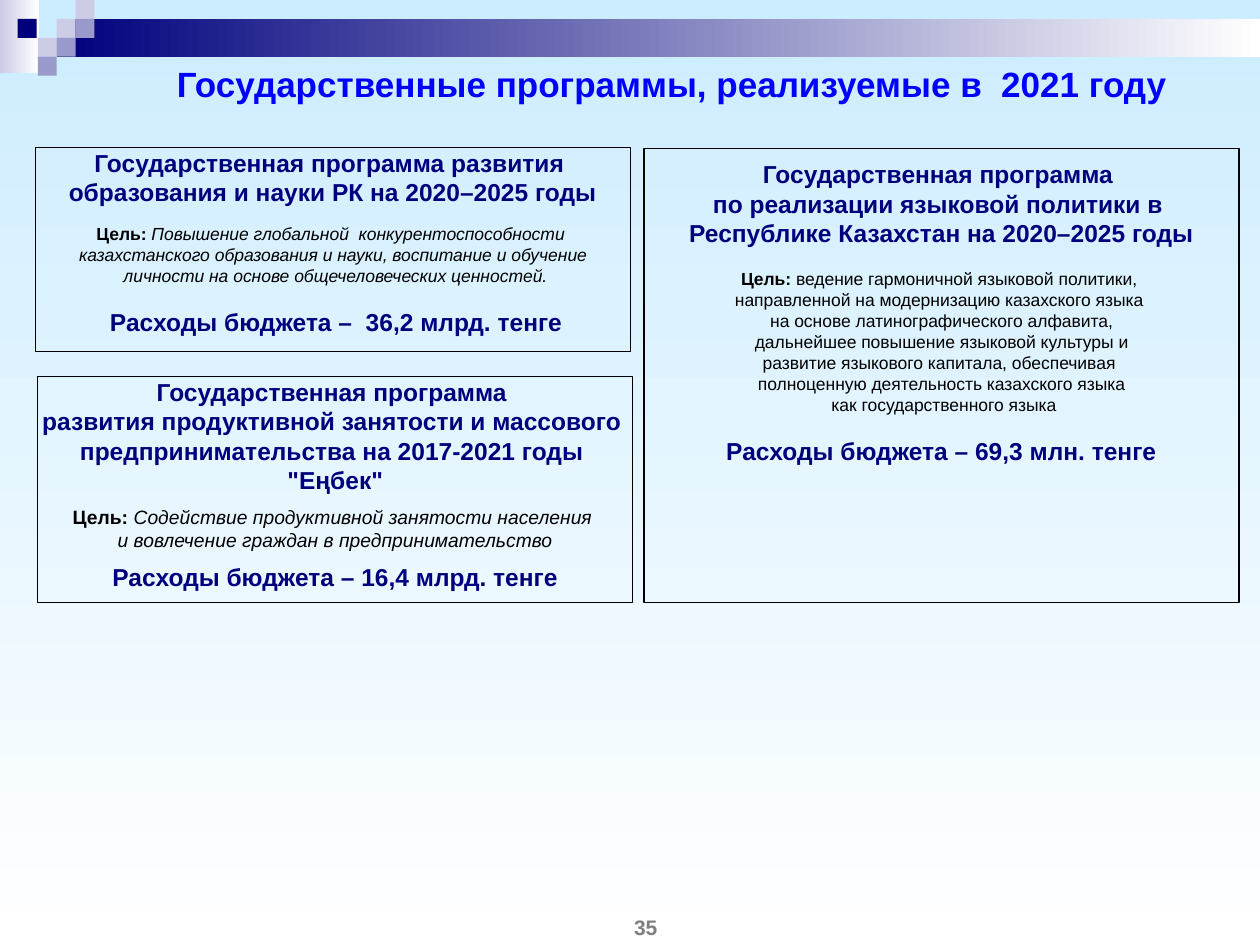
from pptx import Presentation
from pptx.dml.color import RGBColor
from pptx.enum.shapes import MSO_SHAPE
from pptx.enum.text import MSO_ANCHOR, PP_ALIGN
from pptx.util import Pt

RECT = MSO_SHAPE.RECTANGLE
TOP, MIDDLE = MSO_ANCHOR.TOP, MSO_ANCHOR.MIDDLE
CENTER = PP_ALIGN.CENTER
NAVY, LILAC, MAUVE = "00007D", "CCCCE6", "9999CC"
WHITE, BLACK, SKY, BLUE, GRAY = "FFFFFF", "000000", "CCECFF", "0000FF", "7F7F7F"
LEAD = 1.2


def rgb(code):
    """Turn a hex string into a colour."""
    return RGBColor.from_string(code)


def blend(fill, start, end, angle):
    """Give a fill a gradient of two colours."""
    fill.gradient()
    fill.gradient_angle = angle
    for stop, code in zip(fill.gradient_stops, (start, end)):
        stop.color.rgb = rgb(code)


def block(slide, box, start=None, end=None):
    """Add a plain, solid or blended rectangle without a line."""
    shape = slide.shapes.add_shape(RECT, *map(Pt, box))
    shape.shadow.inherit = False
    shape.line.fill.background()
    if end:
        blend(shape.fill, start, end, 0)
    elif start:
        shape.fill.solid()
        shape.fill.fore_color.rgb = rgb(start)
    else:
        shape.fill.background()
    return shape


def style(para, size, code, bold=False):
    """Set the alignment and font of a paragraph."""
    para.alignment = CENTER
    font = para.font
    font.name, font.size, font.bold = "Arial", Pt(size), bold
    font.color.rgb = rgb(code)


def label(slide, box, text, size, code):
    """Add one bold centred line of text."""
    frame = slide.shapes.add_textbox(*map(Pt, box)).text_frame
    frame.word_wrap = True
    frame.vertical_anchor = MIDDLE
    frame.margin_top = frame.margin_bottom = 0
    para = frame.paragraphs[0]
    para.text = text
    style(para, size, code, True)


def banner(slide, box):
    """Draw the blended bar and the stepped squares."""
    left, top, width, unit = box
    block(slide, (left, top, 22.3, 41.8), LILAC, WHITE)
    block(slide, (left + 3 * unit, top + unit, width - 3 * unit, 2 * unit), NAVY, WHITE)
    block(slide, (left + 10.1, top + unit, unit, unit), NAVY)
    steps = {LILAC: [(3, 1), (4, 0), (2, 2)], MAUVE: [(4, 1), (3, 2), (2, 3)]}
    for code, cells in steps.items():
        for col, row in cells:
            block(slide, (left + col * unit, top + row * unit, unit, unit), code)


def card(slide, box, head, goal, cost, size, gaps, italic=True, inset=0):
    """Add a framed programme with its heading, goal and cost."""
    shape = block(slide, box)
    shape.line.color.rgb = rgb(BLACK)
    shape.line.width = Pt(0.75)
    frame = shape.text_frame
    frame.word_wrap = False
    frame.vertical_anchor = TOP
    frame.margin_left = frame.margin_right = frame.margin_bottom = 0
    frame.margin_top = Pt(inset)
    parts = [(head, 14, NAVY, 0), (goal, size, BLACK, gaps[0]), (cost, 14, NAVY, gaps[1])]
    for spot, (lines, points, code, gap) in enumerate(parts):
        para = frame.add_paragraph() if spot else frame.paragraphs[0]
        style(para, points, code, lines is not goal)
        para.line_spacing = Pt(points * LEAD)
        para.space_before = Pt(gap)
        if lines is goal:
            para.font.italic = italic
            tag = para.add_run()
            tag.text = "Цель: "
            tag.font.bold, tag.font.italic = True, False
        for row, line in enumerate(lines):
            if row:
                para.add_line_break()
            para.add_run().text = line


def main():
    """Build and save the slide."""
    deck = Presentation()
    deck.slide_width, deck.slide_height = Pt(720), Pt(540)
    slide = deck.slides.add_slide(deck.slide_layouts[6])
    blend(slide.background.fill, SKY, WHITE, 270)
    banner(slide, (0, 0, 720, 10.8))
    label(slide, (60, 37, 648, 22), "Государственные программы, реализуемые в  2021 году", 20, BLUE)
    card(
        slide, (21.6, 215.3, 340, 129),
        ["Государственная программа ", "развития продуктивной занятости и массового ",
         "предпринимательства на 2017-2021 годы ", "\"Еңбек\""],
        ["Содействие продуктивной занятости населения ",
         "и вовлечение граждан в предпринимательство"],
        ["Расходы бюджета – 16,4 млрд. тенге"], 11, (6, 6))
    card(
        slide, (368, 85, 340, 259.3),
        ["Государственная программа ", "по реализации языковой политики в ",
         "Республике Казахстан на 2020–2025 годы"],
        ["ведение гармоничной языковой политики, ",
         "направленной на модернизацию казахского языка ",
         "на основе латинографического алфавита,",
         " дальнейшее повышение языковой культуры и ",
         "развитие языкового капитала, обеспечивая ",
         "полноценную деятельность казахского языка",
         " как государственного языка"],
        ["Расходы бюджета – 69,3 млн. тенге"], 10, (12, 12), False, 6)
    label(slide, (318, 515, 102, 29), "35", 12, GRAY)
    card(
        slide, (20.2, 84.3, 340, 116.6),
        ["Государственная программа развития ", "образования и науки РК на 2020–2025 годы"],
        ["Повышение глобальной  конкурентоспособности ",
         "казахстанского образования и науки, воспитание и обучение",
         " личности на основе общечеловеческих ценностей."],
        [" Расходы бюджета –  36,2 млрд. тенге"], 10, (9.6, 12))
    deck.save("out.pptx")


if __name__ == "__main__":
    main()
